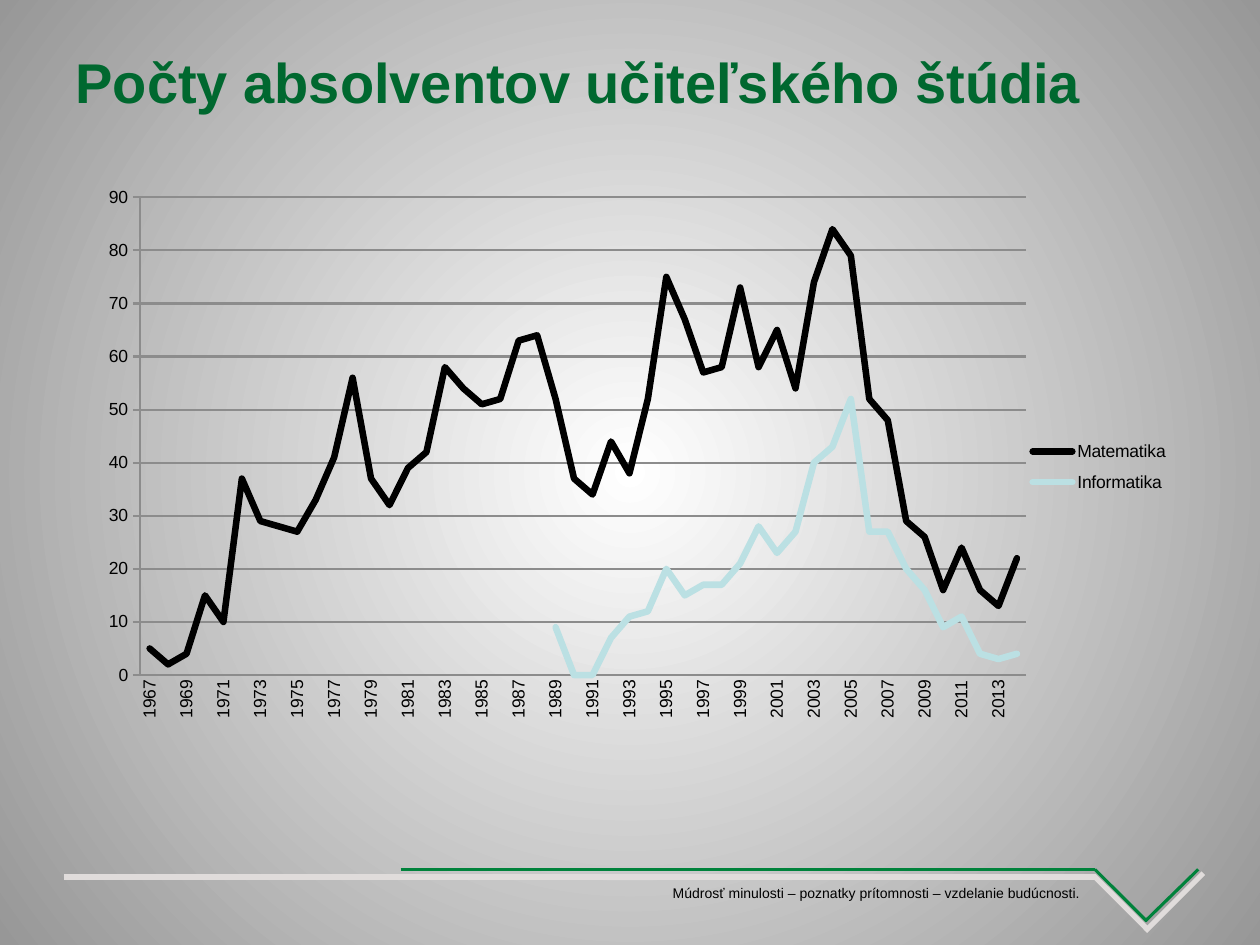
from lxml import etree
from pptx import Presentation
from pptx.chart.data import CategoryChartData
from pptx.dml.color import RGBColor
from pptx.enum import chart as ch, shapes, text
from pptx.oxml import parse_xml
from pptx.oxml.ns import nsdecls, qn
from pptx.util import Pt

HUES = {"title": "00682F", "green": "00823B", "pale": "E0DCDB", "ink": "000000",
        "axis": "8C8C8C", "math": "000000", "info": "BBE0E3",
        "mid": "FFFFFF", "edge": "979797"}


def tint(name):
    return RGBColor.from_string(HUES[name])


def style(font, size, hue, bold=False):
    form = {"name": "Arial", "size": Pt(size), "bold": bold}
    for key, val in form.items():
        setattr(font, key, val)
    font.color.rgb = tint(hue)


prs = Presentation()
prs.slide_width, prs.slide_height = Pt(720), Pt(540)
slide = prs.slides.add_slide(prs.slide_layouts[5])

# Background: radial gradient from the centre
fill = slide.background.fill
fill.gradient()
for stop, hue, pos in zip(fill.gradient_stops, ("mid", "edge"), (0, 1)):
    stop.color.rgb = tint(hue)
    stop.position = pos
grad = slide.background._cSld.find(".//" + qn("a:gradFill"))
grad.replace(grad.find(qn("a:lin")), parse_xml(
    f'<a:path {nsdecls("a")} path="circle">'
    '<a:fillToRect l="50000" t="50000" r="50000" b="50000"/></a:path>'))

# Footer rules and check mark: x1, y1, x2, y2, colour, width
rules = [
    (625.7, 496.8, 655.2, 526.3, "green", 1.75),
    (684.7, 496.8, 654.5, 526.3, "green", 1.75),
    (625, 500.4, 655.2, 530.6, "pale", 3),
    (687.6, 499, 654.5, 532.1, "pale", 3),
    (229, 496.8, 625.7, 496.8, "green", 1.75),
    (36.7, 501.1, 626.4, 501.1, "pale", 3),
]
for *ends, hue, width in rules:
    rule = slide.shapes.add_connector(shapes.MSO_CONNECTOR.STRAIGHT, *map(Pt, ends))
    rule.line.color.rgb = tint(hue)
    rule.line.width = Pt(width)
    etree.SubElement(rule._element.spPr, qn("a:effectLst"))

# Motto
motto = slide.shapes.add_textbox(Pt(377.3), Pt(501.8), Pt(247.7), Pt(16.6)).text_frame
motto.word_wrap = False
motto.auto_size = text.MSO_AUTO_SIZE.SHAPE_TO_FIT_TEXT
motto.text = "Múdrosť minulosti – poznatky prítomnosti – vzdelanie budúcnosti."
style(motto.paragraphs[0].runs[0].font, 8, "ink")

# Title
title = slide.shapes.title
for key, val in {"left": 36, "top": 21.6, "width": 648, "height": 49.7}.items():
    setattr(title, key, Pt(val))
frame = title.text_frame
frame.text = "Počty absolventov učiteľského štúdia"
frame.vertical_anchor = text.MSO_ANCHOR.MIDDLE
frame.auto_size = text.MSO_AUTO_SIZE.NONE
frame.paragraphs[0].alignment = text.PP_ALIGN.LEFT
style(frame.paragraphs[0].runs[0].font, 32, "title", True)

# Graduates per year
math = [5, 2, 4, 15, 10, 37, 29, 28, 27, 33, 41, 56, 37, 32, 39, 42,
        58, 54, 51, 52, 63, 64, 52, 37, 34, 44, 38, 52, 75, 67, 57, 58,
        73, 58, 65, 54, 74, 84, 79, 52, 48, 29, 26, 16, 24, 16, 13, 22]
info = [9, 0, 0, 7, 11, 12, 20, 15, 17, 17, 21, 28, 23,
        27, 40, 43, 52, 27, 27, 20, 16, 9, 11, 4, 3, 4]
data = CategoryChartData()
data.categories = [str(year) for year in range(1967, 2015)]
data.add_series("Matematika", math)
data.add_series("Informatika", [None] * (len(math) - len(info)) + info)
chart = slide.shapes.add_chart(ch.XL_CHART_TYPE.LINE, Pt(48.2), Pt(100.1),
                               Pt(640.8), Pt(317.5), data).chart
chart.has_title = False
style(chart.font, 10, "ink")
for line, hue in zip(chart.plots[0].series, ("math", "info")):
    line.smooth = False
    line.marker.style = ch.XL_MARKER_STYLE.NONE
    pen = line.format.line
    pen.color.rgb = tint(hue)
    pen.width = Pt(3.75)
    stroke = line._element.find(qn("c:spPr")).find(qn("a:ln"))
    stroke.set("cap", "rnd")
    etree.SubElement(stroke, qn("a:round"))

# Axes and grid
years, count = chart.category_axis, chart.value_axis
count.minimum_scale, count.maximum_scale, count.major_unit = 0, 90, 10
count.has_major_gridlines = True
years.major_tick_mark = ch.XL_TICK_MARK.NONE
count.major_tick_mark = ch.XL_TICK_MARK.OUTSIDE
for axis in (years, count):
    style(axis.tick_labels.font, 10, "ink")
for part in (years, count, count.major_gridlines):
    part.format.line.color.rgb = tint("axis")
    part.format.line.width = Pt(1.25)
turn = years._element.find(qn("c:txPr")).find(qn("a:bodyPr"))
turn.set("rot", "-5400000")
turn.set("vert", "horz")
skip = parse_xml(f'<c:tickLblSkip {nsdecls("c")} val="2"/>')
years._element.find(qn("c:noMultiLvlLbl")).addprevious(skip)

# Legend, then fixed places for plot and legend
chart.has_legend = True
legend = chart.legend
legend.position = ch.XL_LEGEND_POSITION.RIGHT
legend.include_in_layout = False
style(legend.font, 10, "ink")
plot = chart._chartSpace.chart.plotArea
places = [(plot, '<c:layoutTarget val="inner"/>', (0.05, 0.04, 0.79, 0.86)),
          (legend._element, "", (0.84, 0.46, 0.13, 0.13))]
for part, mode, box in places:
    for old in part.findall(qn("c:layout")):
        part.remove(old)
    body = mode + '<c:xMode val="edge"/><c:yMode val="edge"/>' + "".join(
        f'<c:{key} val="{val}"/>' for key, val in zip("xywh", box))
    node = parse_xml(f'<c:layout {nsdecls("c")}><c:manualLayout>{body}'
                     '</c:manualLayout></c:layout>')
    if part is plot:
        part.insert(0, node)
    else:
        part.find(qn("c:legendPos")).addnext(node)

prs.save("out.pptx")
